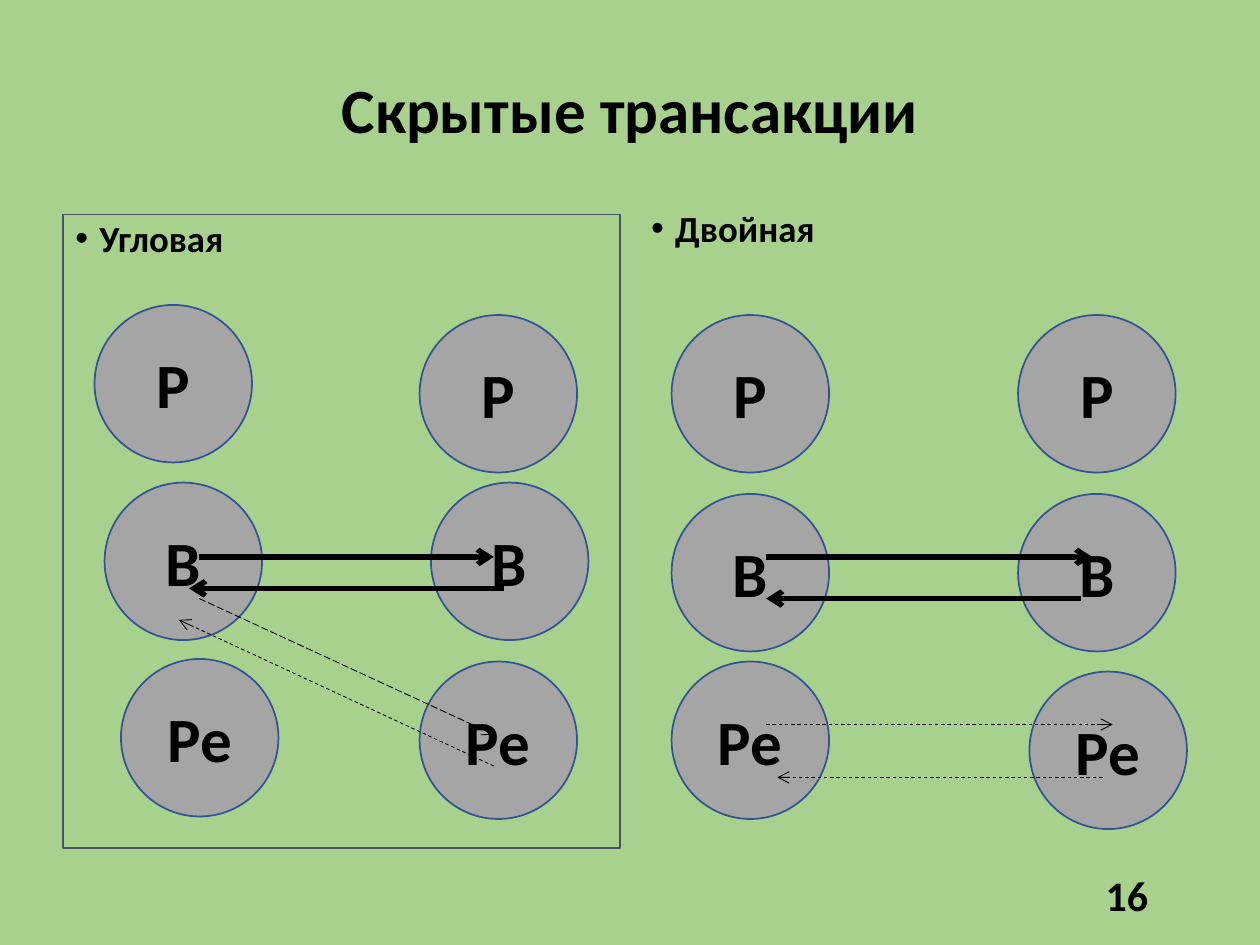
from lxml import etree
from pptx import Presentation
from pptx.dml.color import RGBColor
from pptx.enum.dml import MSO_LINE
from pptx.enum.shapes import MSO_CONNECTOR, MSO_SHAPE
from pptx.enum.text import MSO_ANCHOR, PP_ALIGN
from pptx.oxml.ns import qn
from pptx.util import Inches, Pt

RECT, OVAL = MSO_SHAPE.RECTANGLE, MSO_SHAPE.OVAL
LINE = MSO_CONNECTOR.STRAIGHT
DASH, LONG = MSO_LINE.DASH, MSO_LINE.LONG_DASH
TOP, MIDDLE = MSO_ANCHOR.TOP, MSO_ANCHOR.MIDDLE
LEFT, CENTER, RIGHT = PP_ALIGN.LEFT, PP_ALIGN.CENTER, PP_ALIGN.RIGHT

GREEN = RGBColor(0xA9, 0xD1, 0x8E)
GRAY = RGBColor(0xA5, 0xA5, 0xA5)
BLUE = RGBColor(0x32, 0x54, 0x91)
SLATE = RGBColor(0x44, 0x54, 0x6A)
BLACK = RGBColor(0, 0, 0)


def write(shape, text, size, align, anchor=MIDDLE):
    frame = shape.text_frame
    frame.word_wrap = True
    frame.vertical_anchor = anchor
    para = frame.paragraphs[0]
    para.alignment = align
    run = para.add_run()
    run.text = text
    font = run.font
    font.name, font.size, font.bold = "Calibri", Pt(size), True
    font.color.rgb = BLACK
    return para


prs = Presentation()
prs.slide_width, prs.slide_height = Inches(10), Inches(7.5)
slide = prs.slides.add_slide(prs.slide_layouts[5])
slide.background.fill.solid()
slide.background.fill.fore_color.rgb = GREEN
shapes = slide.shapes

title = shapes.title
title.left, title.top = Inches(0.69), Inches(0.4)
title.width, title.height = Inches(8.62), Inches(0.99)
write(title, "Скрытые трансакции", 36, CENTER).line_spacing = 0.9

frame = shapes.add_shape(RECT, Inches(0.5), Inches(1.7), Inches(4.42), Inches(5.03))
frame.shadow.inherit = False
frame.fill.background()
frame.line.color.rgb = SLATE
frame.line.width = Pt(0.75)
panel = shapes.add_textbox(Inches(5.07), Inches(1.62), Inches(4.42), Inches(5.11))
for box, text in ((frame, "Угловая"), (panel, "Двойная")):
    para = write(box, text, 21, LEFT, TOP)
    para.line_spacing = 0.9
    para.space_before = Pt(7.5)
    props = para._p.get_or_add_pPr()
    props.set("marL", str(Inches(0.19)))
    props.set("indent", str(-Inches(0.19)))
    etree.SubElement(props, qn("a:buFont")).set("typeface", "Arial")
    etree.SubElement(props, qn("a:buChar")).set("char", "•")

number = shapes.add_textbox(Inches(6.96), Inches(6.9), Inches(2.25), Inches(0.4))
write(number, "16", 24, RIGHT)

STATES = ("Р", "В", "Ре")
COLUMNS = (
    ((0.75, 2.42), (0.83, 3.83), (0.96, 5.23)),
    ((3.33, 2.5), (3.42, 3.83), (3.33, 5.25)),
    ((5.33, 2.5), (5.33, 3.92), (5.33, 5.25)),
    ((8.08, 2.5), (8.08, 3.92), (8.17, 5.33)),
)
for column in COLUMNS:
    for state, (x, y) in zip(STATES, column):
        circle = shapes.add_shape(OVAL, Inches(x), Inches(y), Inches(1.25), Inches(1.25))
        circle.shadow.inherit = False
        circle.fill.solid()
        circle.fill.fore_color.rgb = GRAY
        circle.line.color.rgb = BLUE
        circle.line.width = Pt(1)
        write(circle, state, 36, CENTER)

ARROWS = (
    (1.58, 4.42, 3.92, 4.42, None),
    (4, 4.67, 1.5, 4.67, None),
    (1.58, 4.75, 3.92, 5.83, LONG),
    (3.92, 6.08, 1.42, 4.92, DASH),
    (6.08, 4.42, 8.67, 4.42, None),
    (8.58, 4.75, 6.08, 4.75, None),
    (6.08, 5.75, 8.83, 5.75, DASH),
    (8.75, 6.17, 6.17, 6.17, DASH),
)
for *ends, dash in ARROWS:
    arrow = shapes.add_connector(LINE, *[Inches(end) for end in ends])
    arrow.line.color.rgb = BLACK
    arrow.line.width = Pt(0.5 if dash else 3)
    if dash:
        arrow.line.dash_style = dash
    props = arrow._element.spPr
    etree.SubElement(props.find(qn("a:ln")), qn("a:tailEnd")).set("type", "arrow")
    etree.SubElement(props, qn("a:effectLst"))

prs.save("out.pptx")
